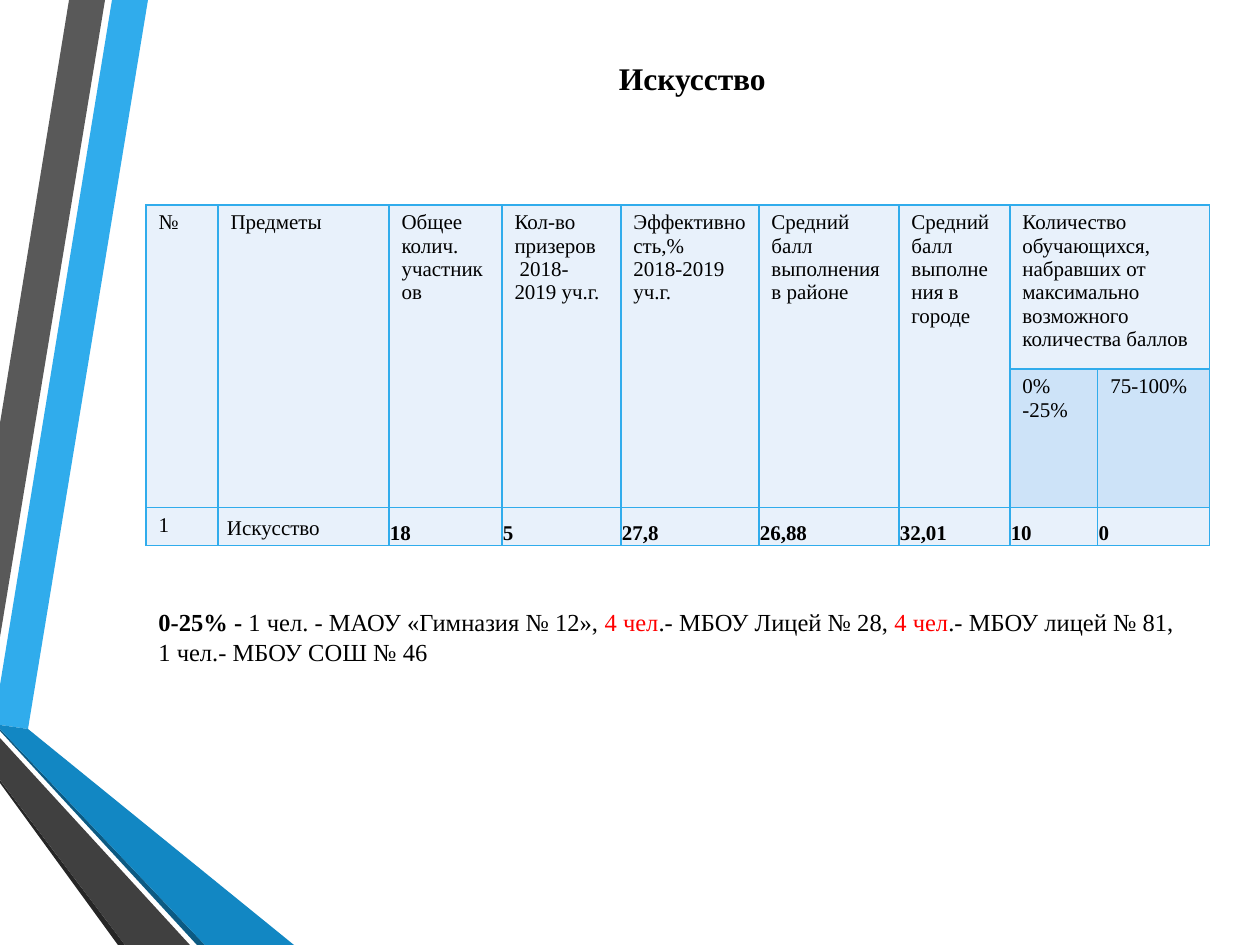
from itertools import product

from lxml.etree import SubElement
from pptx import Presentation
from pptx.dml.color import RGBColor
from pptx.enum.text import MSO_ANCHOR, PP_ALIGN
from pptx.oxml.ns import qn
from pptx.util import Pt

PX = 914400 // 126
FONT = "Times New Roman"
BLACK, RED, BLUE = "000000", "FF0000", "30ACEC"
PALE, TINT = "E8F1FB", "CDE3F8"

RIBBONS = [
    (BLUE, [(0, 685), (0, 725), (28, 729), (148, 0), (112, 0)]),
    ("595959", [(105, 0), (69, 0), (0, 423), (0, 637)]),
    ("262626", [(0, 780), (0, 783), (118, 945), (125, 945)]),
    ("0C5A82", [(0, 729), (0, 731), (197, 945), (205, 945)]),
    ("1287C3", [(0, 729), (205, 945), (294, 945), (28, 729), (0, 725)]),
    ("404040", [(0, 780), (125, 945), (190, 945), (0, 738)]),
]

COLUMN_WIDTHS = [72, 171, 113, 119, 138, 140, 111, 88, 112]
ROW_HEIGHTS = [164, 138, 38]
HEADERS = [
    ["№"],
    ["Предметы"],
    ["Общее колич. участников"],
    ["Кол-во призеров", " 2018-2019 уч.г."],
    ["Эффективность,%", "2018-2019 уч.г."],
    ["Средний балл выполнения в районе"],
    ["Средний балл выполнения в городе"],
    ["Количество обучающихся, набравших от максимально возможного количества баллов"],
]
SCORE_RANGES = ["0% -25%", "75-100%"]
RESULTS = ["18", "5", "27,8", "26,88", "32,01", "10", "0"]

NOTE = [
    [("0-25% - ", {"bold": True}),
     ("1 чел. - МАОУ «Гимназия № 12», ", {}),
     ("4 чел", {"color": RED}),
     (".- МБОУ Лицей № 28, ", {}),
     ("4 чел", {"color": RED}),
     (".- МБОУ лицей № 81,", {})],
    [("1 чел.- МБОУ СОШ № 46", {})],
]


def rgb(value):
    return RGBColor.from_string(value)


def set_attributes(target, values):
    for name, value in values.items():
        setattr(target, name, value)


def add_run(paragraph, text, size, bold=False, color=BLACK):
    run = paragraph.add_run()
    run.text = text
    set_attributes(run.font, {"name": FONT, "size": Pt(size), "bold": bold})
    run.font.color.rgb = rgb(color)


def write_paragraphs(frame, paragraphs, size, **layout):
    """Fill a text frame from lists of (text, run format) pairs."""
    for index, runs in enumerate(paragraphs):
        paragraph = frame.add_paragraph() if index else frame.paragraphs[0]
        set_attributes(paragraph, layout)
        for text, style in runs:
            add_run(paragraph, text, size, **style)


def add_ribbon(slide, color, points):
    builder = slide.shapes.build_freeform(*points[0], scale=PX)
    builder.add_line_segments(points[1:], close=True)
    shape = builder.convert_to_shape()
    shape.shadow.inherit = False
    shape.fill.solid()
    shape.fill.fore_color.rgb = rgb(color)
    shape.line.fill.background()


def add_text(slide, box, paragraphs, size, **layout):
    frame = slide.shapes.add_textbox(*(value * PX for value in box)).text_frame
    frame.word_wrap = True
    write_paragraphs(frame, paragraphs, size, **layout)
    return frame


def set_borders(cell):
    properties = cell._tc.get_or_add_tcPr()
    for position, side in enumerate(("lnL", "lnR", "lnT", "lnB")):
        line = SubElement(properties, qn(f"a:{side}"), w=str(Pt(1)))
        fill = SubElement(line, qn("a:solidFill"))
        SubElement(fill, qn("a:srgbClr"), val=BLUE)
        properties.remove(line)
        properties.insert(position, line)


def fill_cell(cell, lines, bold=False, margins=None, **layout):
    if margins:
        names = ("margin_left", "margin_top", "margin_right", "margin_bottom")
        set_attributes(cell, dict(zip(names, (value * PX for value in margins))))
    paragraphs = [[(line, {"bold": bold})] for line in lines]
    write_paragraphs(cell.text_frame, paragraphs, 12, **layout)


def add_results_table(slide):
    box = (146, 205, sum(COLUMN_WIDTHS), sum(ROW_HEIGHTS))
    rows, columns = len(ROW_HEIGHTS), len(COLUMN_WIDTHS)
    table = slide.shapes.add_table(
        rows, columns, *(value * PX for value in box)).table
    set_attributes(table, {"first_row": False, "horz_banding": False})
    for column, width in zip(table.columns, COLUMN_WIDTHS):
        column.width = width * PX
    for row, height in zip(table.rows, ROW_HEIGHTS):
        row.height = height * PX

    for row, column in product(range(rows), range(columns)):
        cell = table.cell(row, column)
        cell.fill.solid()
        cell.fill.fore_color.rgb = rgb(TINT if row == 1 and column >= 7 else PALE)
        set_borders(cell)

    for column, lines in enumerate(HEADERS):
        cell = table.cell(0, column)
        last = table.cell(0, 8) if column == 7 else table.cell(1, column)
        cell.merge(last)
        fill_cell(cell, lines)
    for column, text in enumerate(SCORE_RANGES, 7):
        fill_cell(table.cell(1, column), [text])

    number, subject = table.cell(2, 0), table.cell(2, 1)
    fill_cell(number, ["1"])
    fill_cell(subject, ["Искусство"], margins=(9, 0, 9, 0), line_spacing=1.15)
    subject.vertical_anchor = MSO_ANCHOR.MIDDLE
    for column, text in enumerate(RESULTS, 2):
        cell = table.cell(2, column)
        fill_cell(cell, [text], bold=True, margins=(1, 1, 1, 0))
        cell.vertical_anchor = MSO_ANCHOR.BOTTOM


def main():
    presentation = Presentation()
    set_attributes(presentation, {"slide_width": 1260 * PX, "slide_height": 945 * PX})
    slide = presentation.slides.add_slide(presentation.slide_layouts[6])
    for color, points in RIBBONS:
        add_ribbon(slide, color, points)
    title = add_text(slide, (351, 43, 630, 55), [[("Искусство", {"bold": True})]], 18,
                     alignment=PP_ALIGN.CENTER, line_spacing=1.25)
    title.paragraphs[0]._p.get_or_add_pPr().set("indent", str(53 * PX))
    add_results_table(slide)
    add_text(slide, (146, 601, 1067, 102), NOTE, 14)
    presentation.save("out.pptx")


if __name__ == "__main__":
    main()
